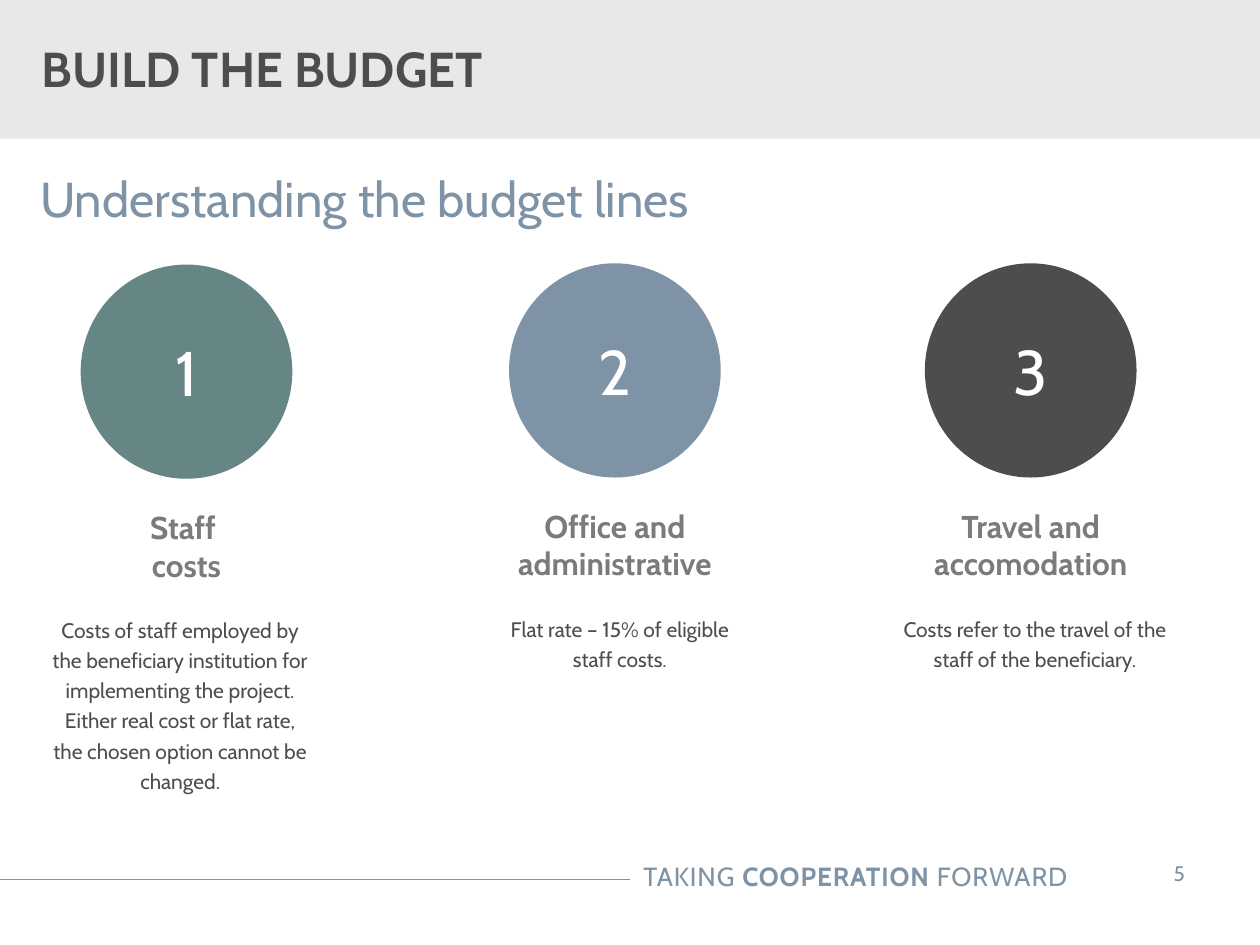
from dataclasses import dataclass

from lxml import etree
from pptx import Presentation
from pptx import util as u
from pptx.dml.color import RGBColor
from pptx.enum import shapes, text
from pptx.oxml.ns import qn


@dataclass(frozen=True)
class Theme:
    font: str = "Cabin"
    blue: str = "7E93A5"
    green: str = "668686"
    dark: str = "4D4D4E"
    grey: str = "7B7B7B"
    band: str = "E8E8E8"
    white: str = "FFFFFF"
    title: int = 28
    number: int = 36
    heading: int = 18
    footer: int = 15
    body: int = 12


THEME = Theme()
WIDTH, HEIGHT = u.Inches(10), u.Inches(7.5)
COLUMNS, ROWS = 100, 75
TIGHT = (0.08, 0.04, 0.08, 0.04)
CIRCLE_WIDTH, CIRCLE_HEIGHT = 16.8, 17

BUDGET_LINES = [
    dict(number="1", color=THEME.green, center=14.8, top=21,
         heading="Staff \vcosts", heading_width=16.9,
         detail="Costs of staff employed by the beneficiary institution for "
                "implementing the project. Either real cost or flat rate, "
                "the chosen option cannot be changed.",
         detail_left=3.2, detail_width=22.2, detail_height=15.4),
    dict(number="2", color=THEME.blue, center=48.8, top=20.9,
         heading="Office and administrative", heading_width=19,
         detail="Flat rate – 15% of eligible staff costs.",
         detail_left=38, detail_width=22.4, detail_height=5.5),
    dict(number="3", color=THEME.dark, center=81.8, top=20.9,
         heading="Travel and accomodation", heading_width=18.9,
         detail="Costs refer to the travel of the staff of the beneficiary.",
         detail_left=70.8, detail_width=22.7, detail_height=5.5),
]


def across(columns):
    return round(WIDTH * columns / COLUMNS)


def down(rows):
    return round(HEIGHT * rows / ROWS)


def place(left, top, width, height):
    return across(left), down(top), across(width), down(height)


def paint(color):
    return RGBColor.from_string(color)


def write(box, content, size, color, bold=False, align="LEFT", anchor="TOP",
          insets=(0.1, 0.05, 0.1, 0.05), leading=None, tracking=0):
    frame = box.text_frame
    frame.word_wrap = True
    frame.vertical_anchor = text.MSO_ANCHOR[anchor]
    (frame.margin_left, frame.margin_top,
     frame.margin_right, frame.margin_bottom) = map(u.Inches, insets)
    para = frame.paragraphs[0]
    para.alignment = text.PP_ALIGN[align]
    if leading:
        para.line_spacing = leading
    parts = [(content, bold)] if isinstance(content, str) else content
    for words, strong in parts:
        for index, line in enumerate(words.split("\v")):
            if index:
                para.add_line_break()
            span = para.add_run()
            span.text = line
            span.font.name = THEME.font
            span.font.size = u.Pt(size)
            span.font.bold = strong
            span.font.color.rgb = paint(color)
            if tracking:
                span.font._element.set("spc", str(round(tracking * 100)))


def add_text(page, area, content, **style):
    box = page.shapes.add_textbox(*place(*area))
    write(box, content, **style)


def add_filled(page, kind, area, color):
    shape = page.shapes.add_shape(kind, *place(*area))
    shape.shadow.inherit = False
    shape.fill.solid()
    shape.fill.fore_color.rgb = paint(color)
    shape.line.fill.background()
    return shape


def add_rule(page, start, end, row):
    rule = page.shapes.add_connector(
        shapes.MSO_CONNECTOR.STRAIGHT,
        across(start), down(row), across(end), down(row))
    rule.line.color.rgb = paint(THEME.blue)
    rule.line.width = u.Pt(0.75)
    etree.SubElement(rule._element.spPr, qn("a:effectLst"))


def add_budget_line(page, number, color, center, top, heading, heading_width,
                    detail, detail_left, detail_width, detail_height):
    circle = add_filled(
        page, shapes.MSO_SHAPE.OVAL,
        (center - CIRCLE_WIDTH / 2, top, CIRCLE_WIDTH, CIRCLE_HEIGHT), color)
    write(circle, number, size=THEME.number, color=THEME.white,
          align="CENTER", anchor="MIDDLE", insets=TIGHT)
    add_text(page, (center - heading_width / 2, top + 18.9, heading_width, 6.9),
             heading, size=THEME.heading, color=THEME.grey, bold=True,
             align="CENTER", insets=TIGHT)
    add_text(page, (detail_left, top + 27.2, detail_width, detail_height),
             detail, size=THEME.body, color=THEME.dark, align="CENTER",
             insets=TIGHT, leading=1.2)


def add_header(page):
    add_filled(page, shapes.MSO_SHAPE.RECTANGLE, (0, 0, COLUMNS, 11), THEME.band)
    add_text(page, (-0.1, 1.6, 72.1, 7.5), "BUILD THE BUDGET",
             size=THEME.title, color=THEME.dark, bold=True, anchor="MIDDLE",
             insets=(0.34, 0.05, 0.1, 0.05))
    add_text(page, (3.2, 14.6, 93.6, 8.2), "Understanding the budget lines",
             size=THEME.title, color=THEME.blue, insets=(0, 0, 0, 0),
             leading=u.Pt(25))


def add_footer(page):
    add_rule(page, 0, 50, 69.8)
    slogan = [("TAKING ", False), ("COOPERATION", True), (" FORWARD", False)]
    add_text(page, (38.8, 67.8, 46.9, 3.5), slogan, size=THEME.footer,
             color=THEME.blue, align="RIGHT", tracking=0.5)
    add_text(page, (89.9, 67.3, 7.4, 4), "5", size=THEME.body,
             color=THEME.blue, align="CENTER", insets=(0.2, 0.1, 0.2, 0.1))


def main():
    deck = Presentation()
    deck.slide_width, deck.slide_height = WIDTH, HEIGHT
    page = deck.slides.add_slide(deck.slide_layouts[6])
    add_header(page)
    for budget_line in BUDGET_LINES:
        add_budget_line(page, **budget_line)
    add_footer(page)
    deck.save("out.pptx")


if __name__ == "__main__":
    main()
